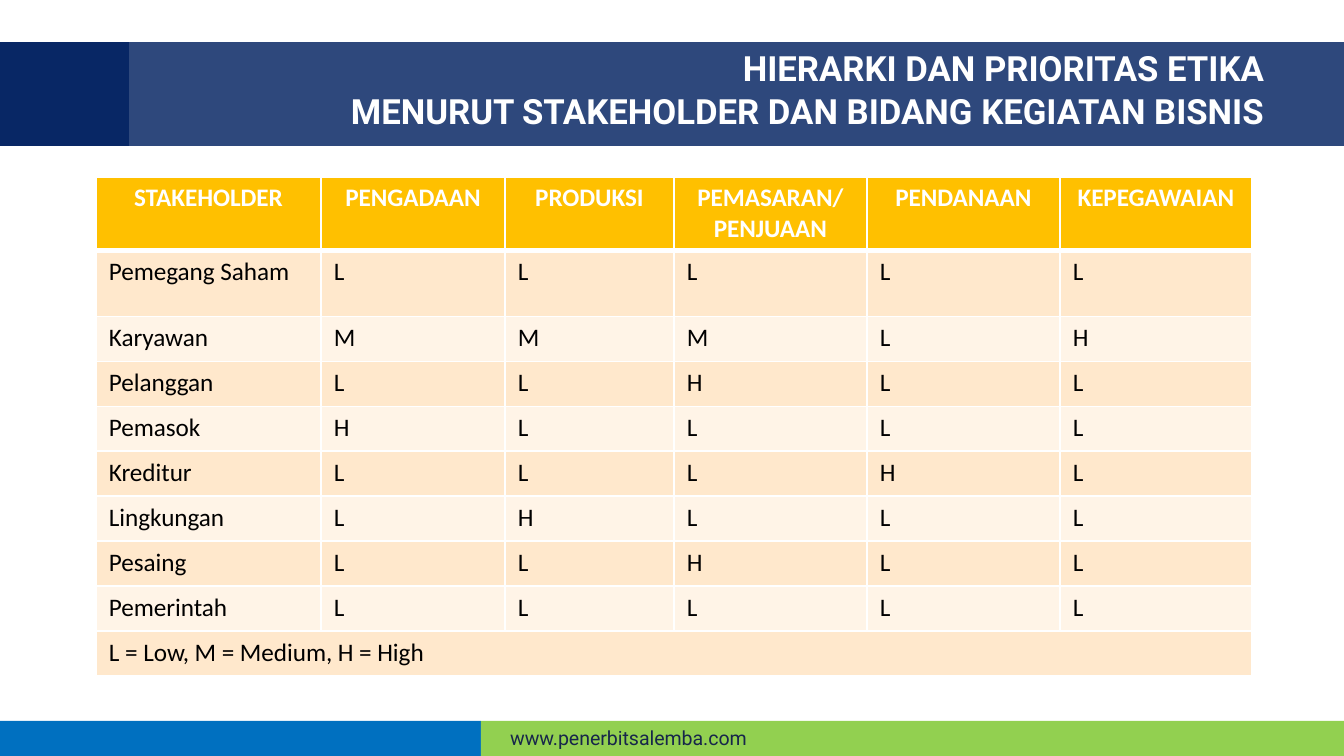
from lxml import etree
from pptx import Presentation
from pptx.dml.color import RGBColor
from pptx.enum.shapes import MSO_SHAPE
from pptx.enum.text import MSO_ANCHOR, MSO_AUTO_SIZE, PP_ALIGN
from pptx.oxml.ns import qn
from pptx.util import Pt

RECTANGLE = MSO_SHAPE.RECTANGLE
MIDDLE = MSO_ANCHOR.MIDDLE
NO_FIT = MSO_AUTO_SIZE.NONE
LEFT, CENTER, RIGHT = PP_ALIGN.LEFT, PP_ALIGN.CENTER, PP_ALIGN.RIGHT

EMU_PER_PX = 914400 / 134.4
WIDTH, HEIGHT = 1344, 756
BAND_TOP, BAND_HEIGHT = 42, 104
FOOTER_TOP, FOOTER_SPLIT = 721, 481

WHITE, BLACK, NAVY = "FFFFFF", "000000", "002060"
HEADER_FILL = "FFC000"
ROW_FILLS = ("FFE8CC", "FFF4E7")

HEADINGS = ["STAKEHOLDER", "PENGADAAN", "PRODUKSI", "PEMASARAN/\nPENJUAAN",
            "PENDANAAN", "KEPEGAWAIAN"]
PRIORITIES = [
    ("Pemegang Saham", "LLLLL"),
    ("Karyawan", "MMMLH"),
    ("Pelanggan", "LLHLL"),
    ("Pemasok", "HLLLL"),
    ("Kreditur", "LLLHL"),
    ("Lingkungan", "LHLLL"),
    ("Pesaing", "LLHLL"),
    ("Pemerintah", "LLLLL"),
]
LEGEND = "L = Low, M = Medium, H = High"
COLUMN_WIDTHS = [225, 184, 169, 193, 193, 192]
ROW_HEIGHTS = [66, 66] + [45] * 8


def px(length):
    return round(length * EMU_PER_PX)


def color(hex_value):
    return RGBColor.from_string(hex_value)


class SlideBuilder:
    heading_font = "Roboto"
    table_font = "Calibri"

    def __init__(self, slide):
        self.slide = slide

    def place(self, shape, *box):
        shape.left, shape.top, shape.width, shape.height = map(px, box)

    def set_text(self, frame, text, font, size, hex_value, bold=False, align=LEFT):
        frame.text = text
        for paragraph in frame.paragraphs:
            paragraph.alignment = align
            paragraph.font.name = font
            paragraph.font.size = Pt(size)
            paragraph.font.bold = bold
            paragraph.font.color.rgb = color(hex_value)

    def bar(self, box, fill, opacity=100):
        bar = self.slide.shapes.add_shape(RECTANGLE, *map(px, box))
        bar.shadow.inherit = False
        bar.fill.solid()
        bar.fill.fore_color.rgb = color(fill)
        bar.line.fill.background()
        if opacity < 100:
            tint = bar.element.spPr.find(qn("a:solidFill"))[0]
            etree.SubElement(tint, qn("a:alpha"), val=str(opacity * 1000))

    def title(self, text, box):
        title = self.slide.shapes.title
        self.place(title, *box)
        title.element.getparent().append(title.element)
        frame = title.text_frame
        frame.word_wrap = True
        frame.auto_size = NO_FIT
        frame.vertical_anchor = MIDDLE
        self.set_text(frame, text, self.heading_font, 18.6, WHITE, True, RIGHT)
        for index, paragraph in enumerate(frame.paragraphs):
            paragraph.line_spacing = 0.7
            paragraph.space_before = Pt(7.5 if index else 0)

    def label(self, text, box, size, hex_value):
        label = self.slide.shapes.add_textbox(*map(px, box))
        label.text_frame.word_wrap = True
        self.set_text(label.text_frame, text, self.heading_font, size, hex_value)

    def cell(self, cell, text, fill, header):
        properties = cell._tc.get_or_add_tcPr()
        for side in ("lnL", "lnR", "lnT", "lnB"):
            points = 3 if header and side == "lnB" else 1
            border = etree.SubElement(properties, qn(f"a:{side}"), w=str(Pt(points)))
            solid = etree.SubElement(border, qn("a:solidFill"))
            etree.SubElement(solid, qn("a:srgbClr"), val=WHITE)
        cell.fill.solid()
        cell.fill.fore_color.rgb = color(fill)
        cell.margin_left = cell.margin_right = px(13)
        cell.margin_top = cell.margin_bottom = px(6)
        self.set_text(cell.text_frame, text, self.table_font, 13.5,
                      WHITE if header else BLACK, header, CENTER if header else LEFT)

    def table(self, rows, left, top, widths, heights):
        box = left, top, sum(widths), sum(heights)
        table = self.slide.shapes.add_table(len(rows), len(widths), *map(px, box)).table
        table.horz_banding = False
        for column, width in zip(table.columns, widths):
            column.width = px(width)
        for row, height in zip(table.rows, heights):
            row.height = px(height)
        for index, texts in enumerate(rows):
            fill = ROW_FILLS[(index - 1) % 2] if index else HEADER_FILL
            for cell, text in zip(table.rows[index].cells, texts):
                self.cell(cell, text, fill, index == 0)
        last = len(rows) - 1
        table.cell(last, 0).merge(table.cell(last, len(widths) - 1))


def main():
    deck = Presentation()
    deck.slide_width, deck.slide_height = px(WIDTH), px(HEIGHT)
    builder = SlideBuilder(deck.slides.add_slide(deck.slide_layouts[5]))

    for band_width in (WIDTH, 129):
        builder.bar((0, BAND_TOP, band_width, BAND_HEIGHT), NAVY, 82)
    footer_height = HEIGHT - FOOTER_TOP
    builder.bar((0, FOOTER_TOP, FOOTER_SPLIT, footer_height), "0070C0")
    builder.bar((FOOTER_SPLIT, FOOTER_TOP, WIDTH - FOOTER_SPLIT, footer_height), "92D050")
    builder.label("www.penerbitsalemba.com", (497, 719, 277, 38), 10.5, "17264A")

    builder.title("HIERARKI DAN PRIORITAS ETIKA\n"
                  "MENURUT STAKEHOLDER DAN BIDANG KEGIATAN BISNIS",
                  (223, BAND_TOP, 1055, BAND_HEIGHT))
    rows = [HEADINGS]
    rows += [[stakeholder, *levels] for stakeholder, levels in PRIORITIES]
    rows.append([LEGEND] + [""] * (len(HEADINGS) - 1))
    builder.table(rows, 96, 177, COLUMN_WIDTHS, ROW_HEIGHTS)
    deck.save("out.pptx")


if __name__ == "__main__":
    main()
